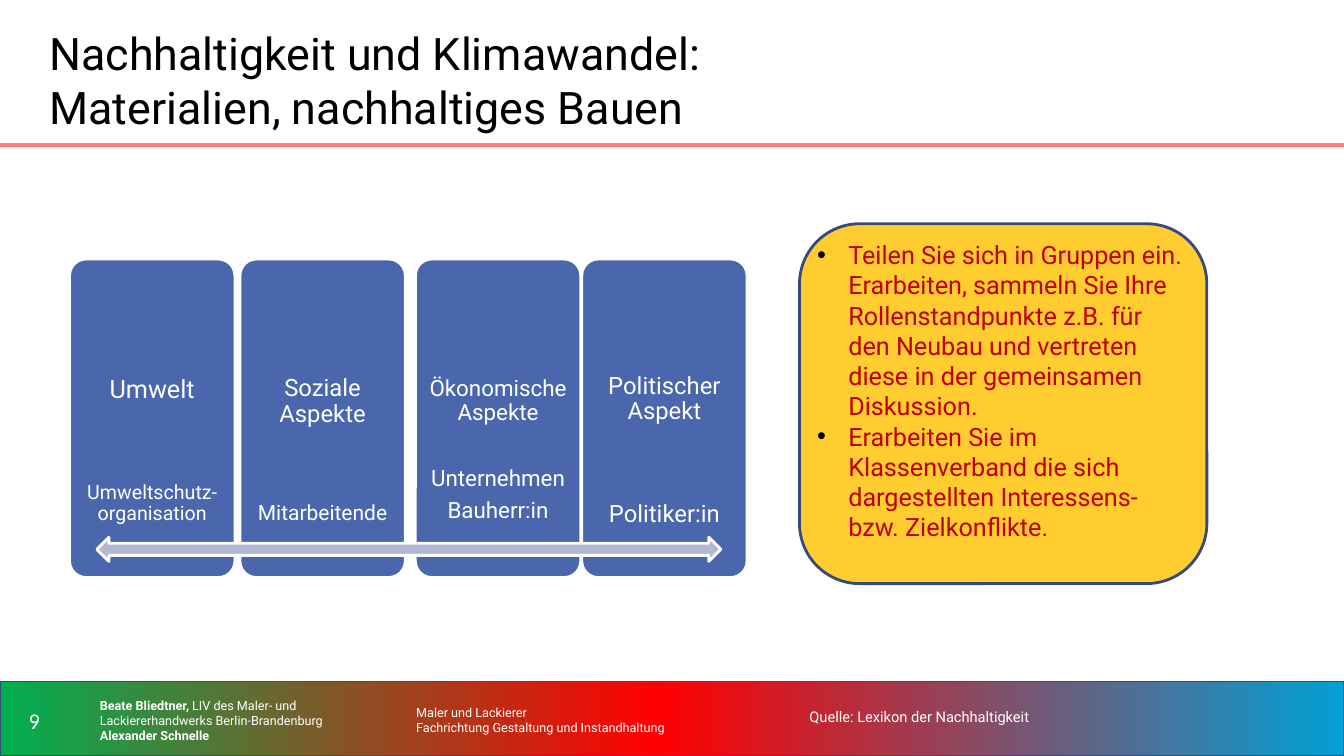
from lxml import etree
from pptx import Presentation
from pptx.dml.color import RGBColor
from pptx.enum.shapes import MSO_SHAPE
from pptx.enum.text import MSO_ANCHOR, MSO_AUTO_SIZE, PP_ALIGN
from pptx.oxml.ns import qn
from pptx.util import Inches, Pt

RECT = MSO_SHAPE.RECTANGLE
ROUNDED = MSO_SHAPE.ROUNDED_RECTANGLE
DOUBLE_ARROW = MSO_SHAPE.LEFT_RIGHT_ARROW
MIDDLE = MSO_ANCHOR.MIDDLE
NO_FIT = MSO_AUTO_SIZE.NONE
LEFT, CENTER = PP_ALIGN.LEFT, PP_ALIGN.CENTER

WHITE, BLACK, NAVY, BLUE = "FFFFFF", "000000", "364A7D", "4A66AC"
CORAL, YELLOW, RED, LILAC = "FF7E79", "FFCD2F", "C00000", "B2B8D2"
FOOTER_GRADIENT = [(0, "00B050"), (49, "FF0000"), (100, "01A0D6")]
FOOTER_INSETS = (0.1, 0.05, 0.1, 0.05)

CARD_TOP, CARD_WIDTH, CARD_HEIGHT = 2.57, 1.64, 3.16
CARDS = [
    (0.69, "Umwelt", 18, [("Umweltschutz-organisation", 14, 56)]),
    (2.38, "Soziale Aspekte", 17, [("Mitarbeitende", 15, 53.5)]),
    (4.12, "Ökonomische Aspekte", 16, [("Unternehmen", 16, 29.5), ("Bauherr:in", 16, 6)]),
    (5.77, "Politischer Aspekt", 17, [("Politiker:in", 17, 55)]),
]
TASKS = [
    "Teilen Sie sich in Gruppen ein. Erarbeiten, sammeln Sie Ihre Rollenstandpunkte "
    "z.B. für den Neubau und vertreten diese in der gemeinsamen Diskussion.",
    "Erarbeiten Sie im Klassenverband die sich dargestellten Interessens- bzw. Zielkonflikte.",
]


def rgb(value):
    """Turn a hex string into a colour."""
    return RGBColor.from_string(value)


class SlideBuilder:
    """Hold the style and the current slide."""

    def __init__(self, slide, font="Roboto"):
        """Remember the slide and its main font."""
        self.slide = slide
        self.font = font

    def shape(self, kind, box, fill=None, line=None, width=1, corner=None):
        """Add a preset shape with a flat fill and optional outline."""
        shape = self.slide.shapes.add_shape(kind, *map(Inches, box))
        shape.shadow.inherit = False
        if fill:
            shape.fill.solid()
            shape.fill.fore_color.rgb = rgb(fill)
        if line:
            shape.line.color.rgb = rgb(line)
            shape.line.width = Pt(width)
        else:
            shape.line.fill.background()
        if corner is not None:
            shape.adjustments[0] = corner
        return shape

    def gradient(self, shape, stops):
        """Fill a shape with a horizontal gradient."""
        shape.fill.gradient()
        shape.fill.gradient_angle = 0
        stop_list = next(shape.element.iter(qn("a:gsLst")))
        for old_stop in list(stop_list):
            stop_list.remove(old_stop)
        for position, colour in stops:
            stop = etree.SubElement(stop_list, qn("a:gs"), pos=str(position * 1000))
            etree.SubElement(stop, qn("a:srgbClr"), val=colour)

    def frame(self, shape, insets=FOOTER_INSETS):
        """Prepare a wrapping, vertically centred text frame."""
        frame = shape.text_frame
        frame.word_wrap = True
        frame.auto_size = NO_FIT
        frame.vertical_anchor = MIDDLE
        (frame.margin_left, frame.margin_top,
         frame.margin_right, frame.margin_bottom) = map(Inches, insets)
        return frame

    def text_box(self, box, insets=FOOTER_INSETS):
        """Add a text box and return its frame."""
        return self.frame(self.slide.shapes.add_textbox(*map(Inches, box)), insets)

    def paragraph(self, frame, index, align=LEFT, spacing=None, before=0):
        """Return the paragraph at an index, adding it after the first."""
        paragraph = frame.add_paragraph() if index else frame.paragraphs[0]
        paragraph.alignment = align
        paragraph.space_before = Pt(before)
        if spacing:
            paragraph.line_spacing = spacing
        return paragraph

    def run(self, paragraph, text, size, colour=WHITE, bold=False, font=None):
        """Add one formatted run."""
        run = paragraph.add_run()
        run.text = text
        run.font.name = font or self.font
        run.font.size = Pt(size)
        run.font.bold = bold
        run.font.color.rgb = rgb(colour)

    def bullet(self, paragraph, indent, colour):
        """Give a paragraph a hanging bullet."""
        props = paragraph._p.get_or_add_pPr()
        props.set("marL", str(Inches(indent)))
        props.set("indent", str(-Inches(indent)))
        bullet_colour = etree.SubElement(props, qn("a:buClr"))
        etree.SubElement(bullet_colour, qn("a:srgbClr"), val=colour)
        etree.SubElement(props, qn("a:buFont"), typeface="Arial")
        etree.SubElement(props, qn("a:buChar"), char="•")

    def title(self, box, lines):
        """Place and fill the title placeholder."""
        title = self.slide.shapes.title
        title.left, title.top, title.width, title.height = map(Inches, box)
        heading = self.paragraph(self.frame(title), 0)
        for index, line in enumerate(lines):
            if index:
                heading.add_line_break()
            self.run(heading, line, 32, BLACK)

    def card(self, left, aspect, size, roles):
        """Add a card with an aspect and the roles that speak for it."""
        self.shape(ROUNDED, (left, CARD_TOP, CARD_WIDTH, CARD_HEIGHT), BLUE, WHITE, 2, 0.1)
        frame = self.text_box((left, 3.84, CARD_WIDTH, 1.26), (0.13,) * 4)
        for index, (text, points, before) in enumerate([(aspect, size, 0), *roles]):
            self.run(self.paragraph(frame, index, CENTER, 0.9, before), text, points)

    def task_panel(self, box, tasks):
        """Add the rounded panel with bulleted tasks."""
        panel = self.shape(ROUNDED, box, YELLOW, NAVY, 2, 0.167)
        frame = self.frame(panel, (0, 0, 0, 0.26))
        for index, task in enumerate(tasks):
            item = self.paragraph(frame, index)
            self.bullet(item, 0.31, BLACK)
            self.run(item, task, 18, RED)

    def footer(self):
        """Add the footer band with number, authors, trade and source."""
        band = self.shape(RECT, (0, 6.76, 13.33, 0.74), line=NAVY)
        self.gradient(band, FOOTER_GRADIENT)
        number = self.text_box((0, 6.84, 0.68, 0.61))
        self.run(self.paragraph(number, 0, CENTER), "9", 16, font="Calibri")
        authors = self.paragraph(self.text_box((0.77, 6.84, 2.78, 0.61), (0.22, 0.05, 0.1, 0.05)), 0)
        self.run(authors, "Beate Bliedtner, ", 9, bold=True)
        self.run(authors, "LIV des Maler- und Lackiererhandwerks Berlin-Brandenburg ", 9)
        self.run(authors, "Alexander Schnelle", 9, bold=True)
        trade = self.text_box((4.03, 6.84, 3.83, 0.61))
        for index, line in enumerate(["Maler und Lackierer", "Fachrichtung Gestaltung und Instandhaltung"]):
            self.run(self.paragraph(trade, index), line, 9)
        source = self.text_box((7.93, 6.8, 5.05, 0.61))
        self.run(self.paragraph(source, 0, spacing=1.1), "Quelle: Lexikon der Nachhaltigkeit", 10.5)


def main():
    """Build and save the slide."""
    deck = Presentation()
    deck.slide_width, deck.slide_height = Inches(13.33), Inches(7.5)
    builder = SlideBuilder(deck.slides.add_slide(deck.slide_layouts[5]))
    builder.footer()
    builder.shape(RECT, (0, 1.42, 13.33, 0.04), CORAL)
    builder.title((0.39, 0.2, 9.84, 1.18),
                  ["Nachhaltigkeit und Klimawandel:", "Materialien, nachhaltiges Bauen"])
    builder.task_panel((7.93, 2.22, 4.04, 3.57), TASKS)
    for card in CARDS:
        builder.card(*card)
    builder.shape(DOUBLE_ARROW, (0.96, 5.33, 6.19, 0.24), LILAC, WHITE, 2)
    deck.save("out.pptx")


if __name__ == "__main__":
    main()
